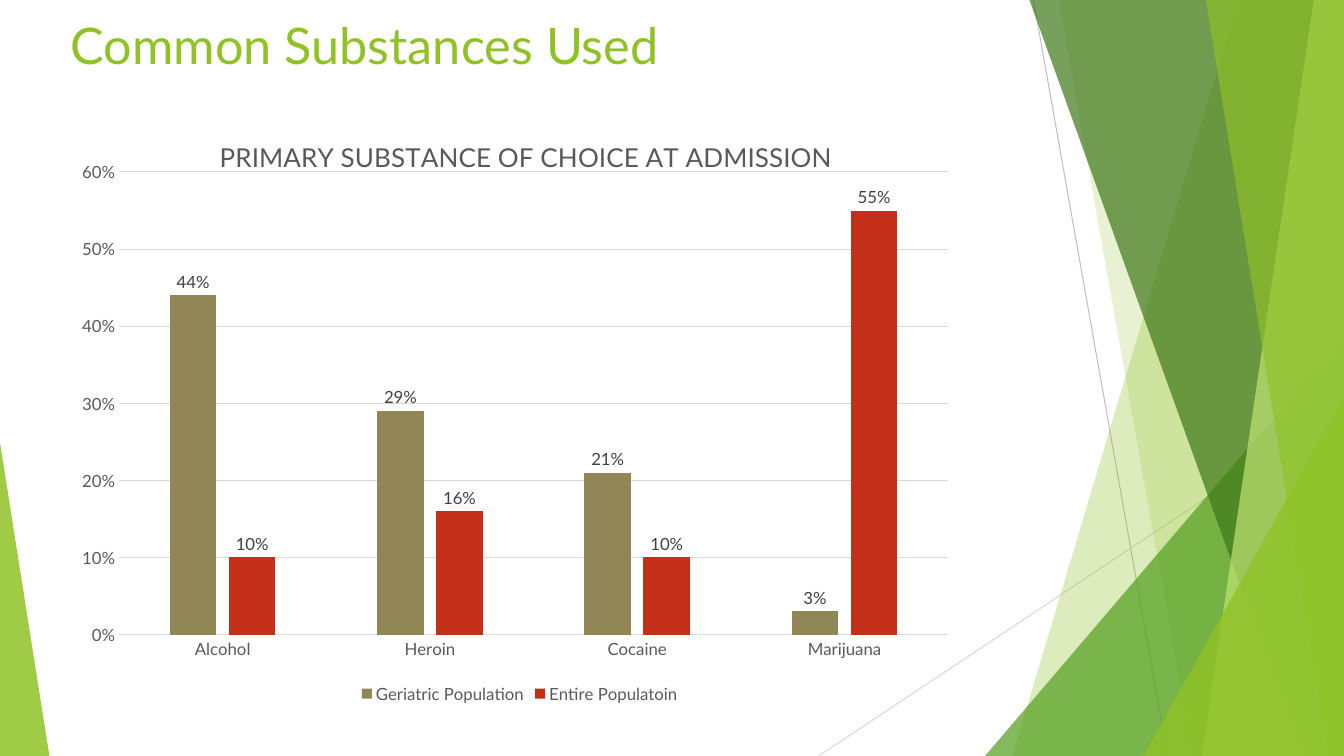
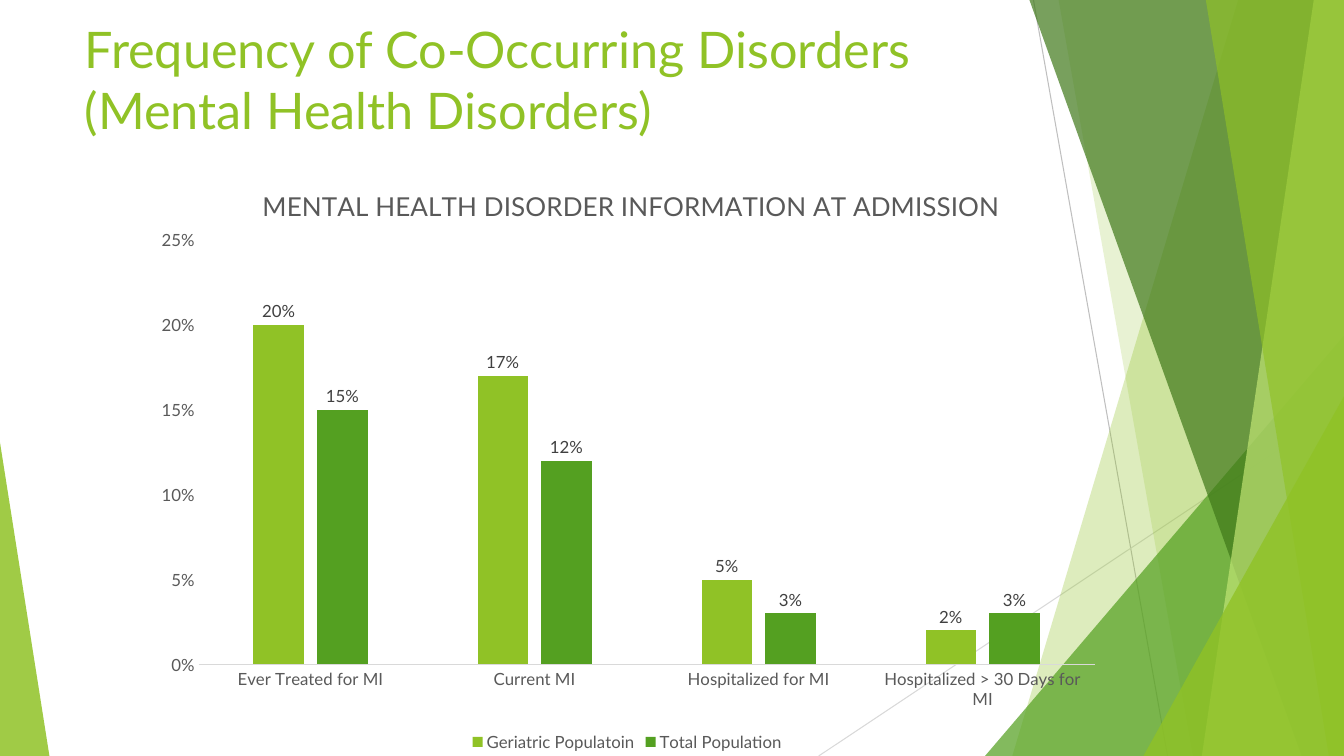
from lxml import etree
from pptx import Presentation
from pptx.chart.data import CategoryChartData
from pptx.dml.color import RGBColor
from pptx.enum.chart import XL_CHART_TYPE, XL_LABEL_POSITION, XL_LEGEND_POSITION, XL_TICK_MARK
from pptx.enum.shapes import MSO_CONNECTOR, MSO_SHAPE
from pptx.enum.text import MSO_ANCHOR, MSO_AUTO_SIZE, PP_ALIGN
from pptx.oxml.ns import qn
from pptx.util import Inches, Pt

COLUMNS = XL_CHART_TYPE.COLUMN_CLUSTERED
OUTSIDE_END = XL_LABEL_POSITION.OUTSIDE_END
LEGEND_BOTTOM = XL_LEGEND_POSITION.BOTTOM
NO_TICKS = XL_TICK_MARK.NONE
STRAIGHT = MSO_CONNECTOR.STRAIGHT
TRIANGLE = MSO_SHAPE.ISOSCELES_TRIANGLE
TOP = MSO_ANCHOR.TOP
NO_AUTOFIT = MSO_AUTO_SIZE.NONE
LEFT = PP_ALIGN.LEFT

LIME = RGBColor(0x90, 0xC2, 0x26)
GREEN = RGBColor(0x54, 0xA0, 0x21)
FOREST = RGBColor(0x3F, 0x78, 0x19)
PALE_LIME = RGBColor(0xC0, 0xE4, 0x74)
OLIVE = RGBColor(0x91, 0x86, 0x55)
RED = RGBColor(0xC4, 0x2F, 0x1A)
AXIS_TEXT = RGBColor(0x59, 0x59, 0x59)
LABEL_TEXT = RGBColor(0x40, 0x40, 0x40)
GRAY = RGBColor(0xBF, 0xBF, 0xBF)
LIGHT_GRAY = RGBColor(0xD9, 0xD9, 0xD9)

FONT = "Lato"
WIDTH, HEIGHT = 13.33, 7.5
TITLE_SIZE = (9.4, 1.44)

# start, end, colour
RAYS = [
    ((10.25, 0), (11.58, HEIGHT), GRAY),
    ((WIDTH, 4.03), (8.12, HEIGHT), LIGHT_GRAY),
]
# Bands run to the right edge: x at the top, x at the bottom.
# Triangles stand on the bottom edge: left, top, width, apex position.
FACETS = [
    ("band", (12.28, 10.04), LIME, 30),
    ("band", (10.5, 11.83), LIME, 20),
    ("triangle", (9.77, 3.33, 3.56, 1), GREEN, 72),
    ("band", (10.21, 12.91), FOREST, 70),
    ("band", (13.03, 11.92), PALE_LIME, 70),
    ("band", (11.96, 13.18), LIME, 65),
    ("triangle", (11.34, 3.93, 1.99, 1), LIME, 80),
    ("triangle", (0, 4.39, 0.49, 0), LIME, 85),
]

SLIDES = [
    {
        "title": "Common Substances Used",
        "title_at": (0.6, 0.09),
        "chart_title": "PRIMARY SUBSTANCE OF CHOICE AT ADMISSION",
        "chart_title_at": {"x": 0.16, "y": 0.04},
        "chart_box": (0.71, 1.09, 8.89, 5.93),
        "plot_box": {"x": 0.053, "y": 0.104, "w": 0.925, "h": 0.774},
        "categories": ["Alcohol", "Heroin", "Cocaine", "Marijuana"],
        "series": [
            ("Geriatric Population", (0.44, 0.29, 0.21, 0.03), OLIVE),
            ("Entire Populatoin", (0.1, 0.16, 0.1, 0.55), RED),
        ],
        "axis_top": 0.6,
        "axis_step": 0.1,
        "gridlines": True,
    },
    {
        "title": "Frequency of Co-Occurring Disorders (Mental Health Disorders)",
        "title_at": (0.74, 0.13),
        "chart_title": "MENTAL HEALTH DISORDER INFORMATION AT ADMISSION",
        "chart_title_at": {"x": 0.12, "y": 0.04},
        "chart_box": (1.4, 1.57, 9.64, 5.93),
        "plot_box": {"x": 0.059, "y": 0.137, "w": 0.922, "h": 0.71},
        "categories": ["Ever Treated for MI", "Current MI", "Hospitalized for MI",
                       "Hospitalized > 30 Days for MI"],
        "series": [
            ("Geriatric Populatoin", (0.2, 0.17, 0.05, 0.02), LIME),
            ("Total Population", (0.15, 0.12, 0.03, 0.03), GREEN),
        ],
        "axis_top": 0.25,
        "axis_step": 0.05,
        "gridlines": False,
    },
]


def style_font(font, size, color):
    font.name = FONT
    font.size = Pt(size)
    font.bold = False
    font.color.rgb = color


def style_line(line, color):
    line.color.rgb = color
    line.width = Pt(0.75)


def add_ray(shapes, start, end, color):
    ray = shapes.add_connector(STRAIGHT, *map(Inches, start + end))
    style_line(ray.line, color)
    etree.SubElement(ray.element.spPr, qn("a:effectLst"))


def add_facet(shapes, kind, geometry, color, opacity):
    if kind == "band":
        top_x, bottom_x = geometry
        corners = [(top_x, 0), (WIDTH, 0), (WIDTH, HEIGHT), (bottom_x, HEIGHT)]
        points = [(Inches(x), Inches(y)) for x, y in corners]
        outline = shapes.build_freeform(*points[0])
        outline.add_line_segments(points[1:], close=True)
        facet = outline.convert_to_shape()
    else:
        left, top, width, apex = geometry
        facet = shapes.add_shape(
            TRIANGLE, Inches(left), Inches(top), Inches(width), Inches(HEIGHT - top))
        facet.adjustments[0] = apex
    facet.shadow.inherit = False
    facet.fill.solid()
    facet.fill.fore_color.rgb = color
    facet.line.fill.background()
    fill_color = facet.element.spPr.find(qn("a:solidFill"))[0]
    etree.SubElement(fill_color, qn("a:alpha"), val=str(opacity * 1000))


def decorate_master(master, slide):
    """Draw the facets as one group and hand it to the master, behind everything."""
    group = slide.shapes.add_group_shape()
    for ray in RAYS:
        add_ray(group.shapes, *ray)
    for facet in FACETS:
        add_facet(group.shapes, *facet)
    for number, properties in enumerate(group.element.iter(qn("p:cNvPr")), 100):
        properties.set("id", str(number))
    master.shapes.element.insert(2, group.element)


def set_chart_layout(parent, index, fractions, inner=False):
    """Place a chart part by fractions of the chart's size."""
    for old_layout in parent.findall(qn("c:layout")):
        parent.remove(old_layout)
    layout = etree.Element(qn("c:layout"))
    manual = etree.SubElement(layout, qn("c:manualLayout"))
    if inner:
        etree.SubElement(manual, qn("c:layoutTarget"), val="inner")
    for name in ("x", "y"):
        etree.SubElement(manual, qn(f"c:{name}Mode"), val="edge")
    for name, value in fractions.items():
        etree.SubElement(manual, qn(f"c:{name}"), val=str(value))
    parent.insert(index, layout)


def add_title(slide, content):
    title = slide.shapes.title
    title.left, title.top = map(Inches, content["title_at"])
    title.width, title.height = map(Inches, TITLE_SIZE)
    frame = title.text_frame
    frame.word_wrap = True
    frame.auto_size = NO_AUTOFIT
    frame.vertical_anchor = TOP
    para = frame.paragraphs[0]
    para.alignment = LEFT
    span = para.add_run()
    span.text = content["title"]
    style_font(span.font, 36, LIME)


def style_axes(chart, content):
    for axis in (chart.category_axis, chart.value_axis):
        axis.major_tick_mark = axis.minor_tick_mark = NO_TICKS
        style_font(axis.tick_labels.font, 12, AXIS_TEXT)
    style_line(chart.category_axis.format.line, LIGHT_GRAY)
    values = chart.value_axis
    values.format.line.fill.background()
    values.minimum_scale = 0
    values.maximum_scale = content["axis_top"]
    values.major_unit = content["axis_step"]
    values.tick_labels.number_format = "0%"
    values.tick_labels.number_format_is_linked = False
    values.has_major_gridlines = content["gridlines"]
    if content["gridlines"]:
        style_line(values.major_gridlines.format.line, LIGHT_GRAY)


def style_series(series, color):
    series.format.fill.solid()
    series.format.fill.fore_color.rgb = color
    series.invert_if_negative = False
    labels = series.data_labels
    labels.show_value = True
    labels.position = OUTSIDE_END
    labels.number_format = "0%"
    labels.number_format_is_linked = False
    style_font(labels.font, 12, LABEL_TEXT)


def add_column_chart(slide, content):
    data = CategoryChartData(number_format="0%")
    data.categories = content["categories"]
    for name, values, _ in content["series"]:
        data.add_series(name, values)
    chart = slide.shapes.add_chart(COLUMNS, *map(Inches, content["chart_box"]), data).chart
    chart.font.name = FONT
    chart.font.size = Pt(10)

    chart.has_title = True
    span = chart.chart_title.text_frame.paragraphs[0].add_run()
    span.text = content["chart_title"]
    style_font(span.font, 18.6, AXIS_TEXT)
    chart.chart_title.include_in_layout = False
    set_chart_layout(chart.chart_title.element, 1, content["chart_title_at"])
    plot_area = chart.element.find(".//" + qn("c:plotArea"))
    set_chart_layout(plot_area, 0, content["plot_box"], inner=True)

    chart.has_legend = True
    chart.legend.position = LEGEND_BOTTOM
    chart.legend.include_in_layout = False
    style_font(chart.legend.font, 12, AXIS_TEXT)

    plot = chart.plots[0]
    plot.gap_width = 219
    plot.overlap = -27
    plot.vary_by_categories = False
    for series, (_, _, color) in zip(plot.series, content["series"]):
        style_series(series, color)
    style_axes(chart, content)


def main():
    deck = Presentation()
    deck.slide_width, deck.slide_height = Inches(WIDTH), Inches(HEIGHT)
    title_only = deck.slide_layouts[5]
    for content in SLIDES:
        slide = deck.slides.add_slide(title_only)
        add_title(slide, content)
        add_column_chart(slide, content)
    decorate_master(deck.slide_master, slide)
    deck.save("out.pptx")


if __name__ == "__main__":
    main()
